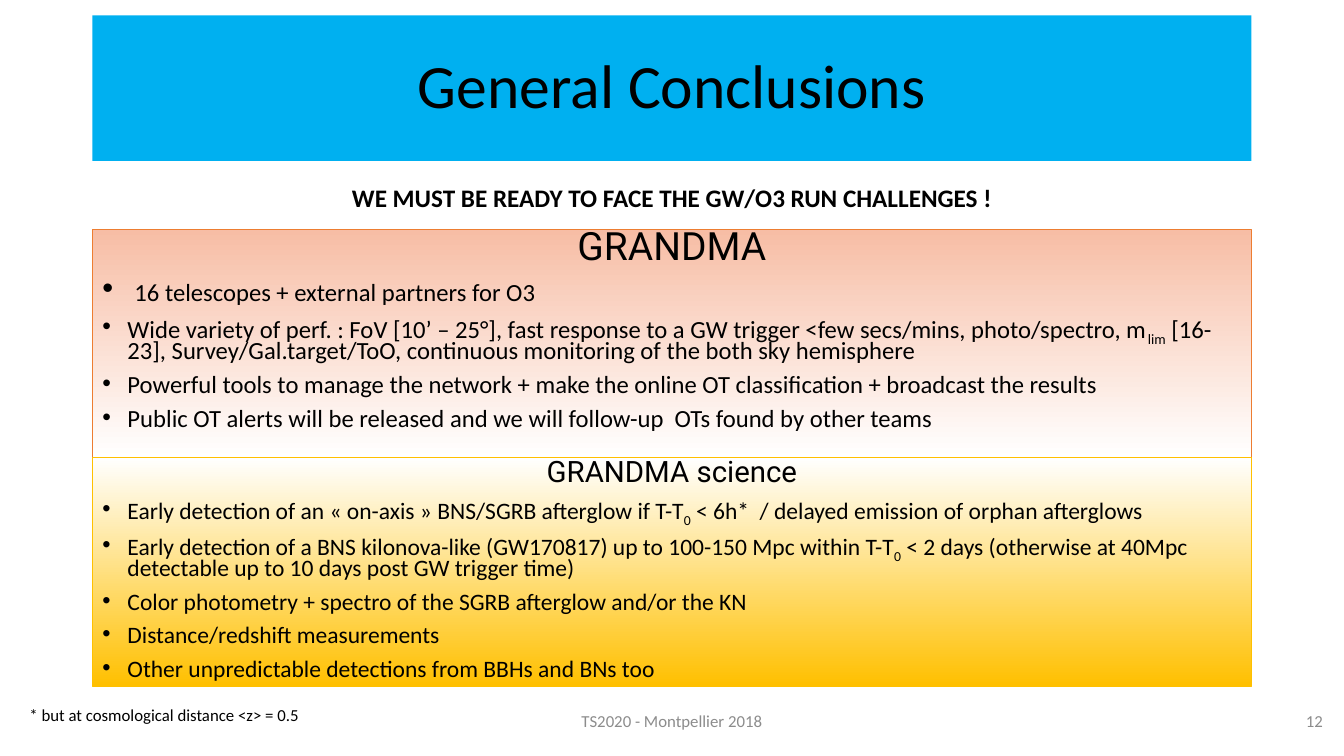
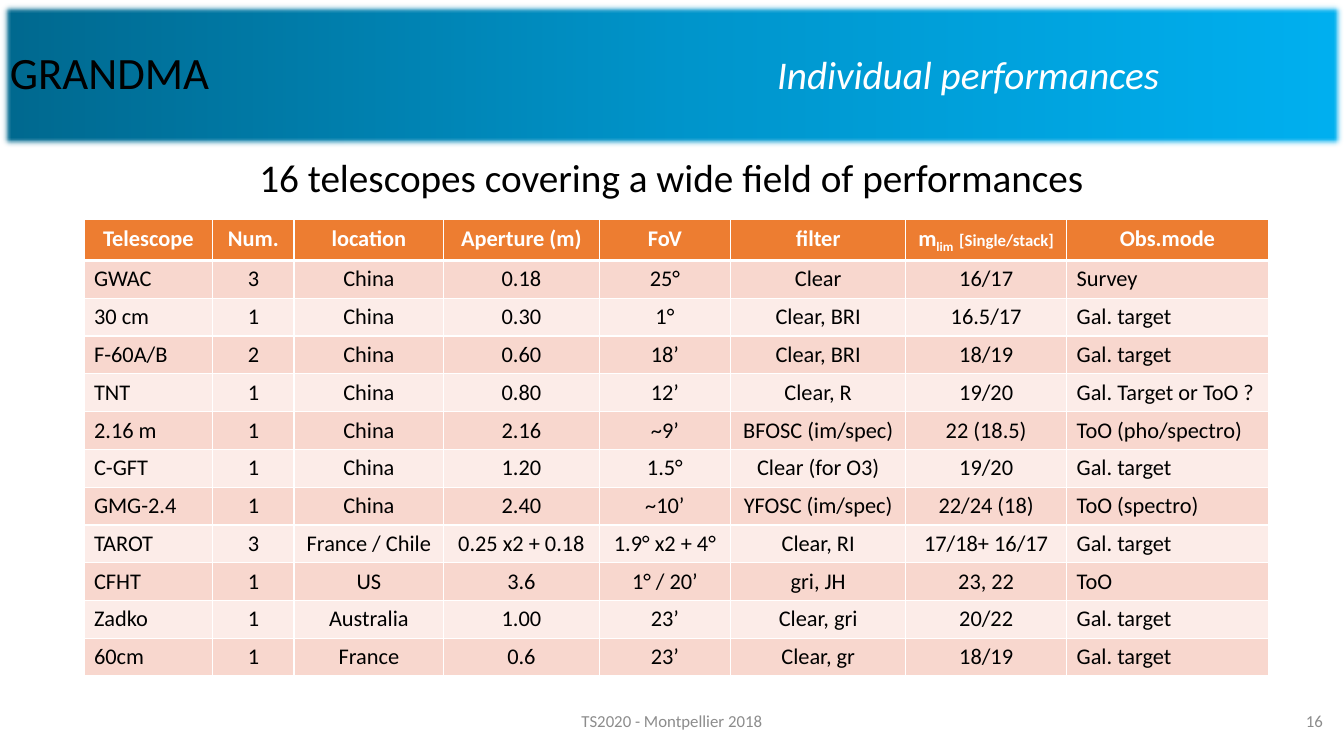
from dataclasses import dataclass

from lxml import etree
from pptx import Presentation
from pptx.dml.color import RGBColor
from pptx.enum import shapes, text
from pptx.oxml import ns
from pptx.util import Pt

LEFT, MID, RIGHT = text.PP_ALIGN.LEFT, text.PP_ALIGN.CENTER, text.PP_ALIGN.RIGHT


@dataclass(frozen=True)
class Theme:
    font: str = "Calibri"
    head: str = "Roboto"
    black: str = "000000"
    white: str = "FFFFFF"
    grey: str = "8C8C8C"
    sky: str = "00B0F0"
    teal: str = "0094CA"
    deep: str = "00688E"
    coral: str = "ED7D31"
    peach: str = "F7BDA5"
    gold: str = "FFC000"
    bands: tuple = ("F8D7CE", "FCECE8")
    title: float = 44
    name: float = 32
    lead: float = 28
    call: float = 18
    cell: float = 16
    note: float = 12


T = Theme()
WIDE, HIGH = 960, 540

NETWORK = (
    "16 telescopes + external partners for O3",
    "Wide variety of perf. : FoV [10’ – 25°], fast response to a GW trigger "
    "<few secs/mins, photo/spectro, m|lim| [16-23], Survey/Gal.target/ToO, "
    "continuous monitoring of the both sky hemisphere",
    "Powerful tools to manage the network + make the online OT classification "
    "+ broadcast the results",
    "Public OT alerts will be released and we will follow-up  OTs found by other teams",
)
SCIENCE = (
    "Early detection of an «\u00a0on-axis\u00a0» BNS/SGRB afterglow if T-T|0| < 6h*  "
    "/ delayed emission of orphan afterglows",
    "Early detection of a BNS kilonova-like (GW170817) up to 100-150 Mpc within "
    "T-T|0| < 2 days (otherwise at 40Mpc detectable up to 10 days post GW trigger time)",
    "Color photometry + spectro of the SGRB afterglow and/or the KN",
    "Distance/redshift measurements",
    "Other unpredictable detections from BBHs and BNs too",
)
HEADS = ("Telescope", "Num.", "location", "Aperture (m)", "FoV", "filter",
         "m|lim  |^[Single/stack]", "Obs.mode")
SCOPES = (
    ("GWAC", "3", "China", "0.18", "25°", "Clear", "16/17", "Survey"),
    ("30 cm", "1", "China", "0.30", "1°", "Clear, BRI", "16.5/17", "Gal. target"),
    ("F-60A/B", "2", "China", "0.60", "18’", "Clear, BRI", "18/19", "Gal. target"),
    ("TNT", "1", "China", "0.80", "12’", "Clear, R", "19/20", "Gal. Target or ToO ?"),
    ("2.16 m", "1", "China", "2.16", "~9’", "BFOSC (im/spec)", "22 (18.5)",
     "ToO (pho/spectro)"),
    ("C-GFT", "1", "China", "1.20", "1.5°", "Clear (for O3)", "19/20", "Gal. target"),
    ("GMG-2.4", "1", "China", "2.40", "~10’", "YFOSC (im/spec)", "22/24 (18)",
     "ToO (spectro)"),
    ("TAROT", "3", "France / Chile", "0.25 x2 + 0.18", "1.9° x2 + 4°", "Clear, RI",
     "17/18+ 16/17", "Gal. target"),
    ("CFHT", "1", "US", "3.6", "1° / 20’", "gri, JH", "23, 22", "ToO"),
    ("Zadko", "1", "Australia", "1.00", "23’", "Clear, gri", "20/22", "Gal. target"),
    ("60cm", "1", "France", "0.6", "23’", "Clear, gr", "18/19", "Gal. target"),
)
COLS = (92, 58, 107, 111, 94, 125, 115, 144)


def rgb(code):
    return RGBColor.from_string(code)


def node(root, tag, **attrs):
    item = etree.SubElement(root, ns.qn(tag))
    for key, value in attrs.items():
        item.set(key, str(value))
    return item


def write(par, words, size, color=T.black, font=T.font, bold=False, italic=False):
    """Add runs; every second part between bars is a subscript."""
    for n, part in enumerate(words.split("|")):
        if not part:
            continue
        run = par.add_run()
        run.text = part
        face = run.font
        face.name, face.size, face.bold, face.italic = font, Pt(size), bold, italic
        face.color.rgb = rgb(color)
        if n % 2:
            run._r.get_or_add_rPr().set("baseline", "-25000")


def label(slide, box, words, size, align=LEFT, color=T.black, bold=False,
          anchor=text.MSO_ANCHOR.TOP):
    frame = slide.shapes.add_textbox(*map(Pt, box)).text_frame
    frame.word_wrap = True
    frame.vertical_anchor = anchor
    par = frame.paragraphs[0]
    par.alignment = align
    write(par, words, size, color, bold=bold)


def block(slide, box, fill, angle=0, line=None):
    """Rectangle with one colour, or a gradient when several are given."""
    shape = slide.shapes.add_shape(shapes.MSO_SHAPE.RECTANGLE, *map(Pt, box))
    shape.shadow.inherit = False
    if len(fill) == 1:
        shape.fill.solid()
        shape.fill.fore_color.rgb = rgb(fill[0])
    else:
        shape.fill.gradient()
        shape.fill.gradient_angle = angle
        stops = shape._element.spPr.find(".//" + ns.qn("a:gsLst"))
        for old in list(stops):
            stops.remove(old)
        for n, code in enumerate(fill):
            stop = node(stops, "a:gs", pos=100000 * n // (len(fill) - 1))
            node(stop, "a:srgbClr", val=code)
    if line:
        shape.line.color.rgb = rgb(line)
        shape.line.width = Pt(0.5)
    else:
        shape.line.fill.background()
    shape.text_frame.word_wrap = True
    return shape


def banner(slide, box, fill):
    shape = block(slide, box, fill)
    shape.text_frame.vertical_anchor = text.MSO_ANCHOR.MIDDLE
    par = shape.text_frame.paragraphs[0]
    par.line_spacing = 0.9
    return shape, par


def panel(slide, box, fill, line, head, size, items, small, gap, lead=0):
    """Headed list; lead sizes a space before the first item."""
    shape = block(slide, box, fill, 270, line)
    frame = shape.text_frame
    frame.vertical_anchor = text.MSO_ANCHOR.TOP
    par = frame.paragraphs[0]
    par.alignment, par.line_spacing = MID, 0.7
    write(par, head, size, font=T.head)
    for n, item in enumerate(items):
        par = frame.add_paragraph()
        props = par._p.get_or_add_pPr()
        props.set("marL", str(Pt(18)))
        props.set("indent", str(-Pt(18)))
        node(props, "a:buFont", typeface="Arial")
        node(props, "a:buChar", char="•")
        par.alignment, par.line_spacing, par.space_before = LEFT, 0.7, Pt(gap)
        if lead and n == 0:
            write(par, " ", lead)
        write(par, item, small)


def footer(slide, number):
    centre = text.MSO_ANCHOR.MIDDLE
    label(slide, (318, 500, 324, 29), "TS2020 - Montpellier 2018", T.note, MID,
          T.grey, anchor=centre)
    label(slide, (736, 500, 216, 29), str(number), T.note, RIGHT, T.grey, anchor=centre)


def border(cell, top, base):
    props = cell._tc.get_or_add_tcPr()
    for side, width in (("L", 1), ("R", 1), ("T", top), ("B", base)):
        edge = node(props, "a:ln" + side, w=Pt(width))
        node(node(edge, "a:solidFill"), "a:srgbClr", val=T.white)


def grid(slide, left, top):
    rows = (HEADS,) + SCOPES
    high = [28] + [27] * len(SCOPES)
    table = slide.shapes.add_table(len(rows), len(COLS), *map(
        Pt, (left, top, sum(COLS), sum(high)))).table
    table.horz_banding = False
    for col, width in zip(table.columns, COLS):
        col.width = Pt(width)
    for r, row in enumerate(rows):
        table.rows[r].height = Pt(high[r])
        first = r == 0
        color = T.white if first else T.black
        for c, words in enumerate(row):
            cell = table.cell(r, c)
            border(cell, 3 if r == 1 else 1, 3 if first else 1)
            cell.fill.solid()
            cell.fill.fore_color.rgb = rgb(T.coral if first else T.bands[(r - 1) % 2])
            par = cell.text_frame.paragraphs[0]
            outer = c in (0, len(COLS) - 1)
            par.alignment = LEFT if outer and not first else MID
            main, _, note = words.partition("^")
            write(par, main, T.cell, color, bold=first)
            write(par, note, T.note, color, bold=first)


def closing(slide):
    left, width, top, high = 66, 828, 164, 163
    _, par = banner(slide, (left, 11, width, 104), (T.sky,))
    par.alignment = MID
    write(par, "General Conclusions", T.title)
    panel(slide, (left, top, width, high), (T.peach, T.white), T.coral,
          "GRANDMA", 27.8, NETWORK, 17.6, 9.4, 22.2)
    label(slide, (45, 127, 870, 51), "WE MUST BE READY TO FACE THE GW/O3 RUN CHALLENGES !",
          T.call, MID, bold=True)
    panel(slide, (left, top + high, width, high), (T.white, T.gold), T.gold,
          "GRANDMA science", 21, SCIENCE, 16.8, 10)
    label(slide, (14, 500, 232, 22), "* but at cosmological distance <z> = 0.5", T.note)
    footer(slide, 12)


def survey(slide):
    shape, par = banner(slide, (0, 1.5, WIDE, 104), (T.deep, T.teal, T.sky))
    glow = shape._element.spPr.find(ns.qn("a:effectLst"))
    node(glow, "a:softEdge", rad=Pt(5))
    tabs = node(par._p.get_or_add_pPr(), "a:tabLst")
    node(tabs, "a:tab", pos=Pt(548), algn="l")
    par.alignment = LEFT
    write(par, "GRANDMA\t", T.name)
    write(par, "Individual performances", T.lead, T.white, italic=True)
    grid(slide, 60, 157)
    label(slide, (115, 106, 729, 41), "16 telescopes covering a wide field of performances",
          T.lead, MID)
    footer(slide, 16)


def main():
    deck = Presentation()
    deck.slide_width, deck.slide_height = Pt(WIDE), Pt(HIGH)
    for build in (closing, survey):
        build(deck.slides.add_slide(deck.slide_layouts[6]))
    deck.save("out.pptx")


if __name__ == "__main__":
    main()
